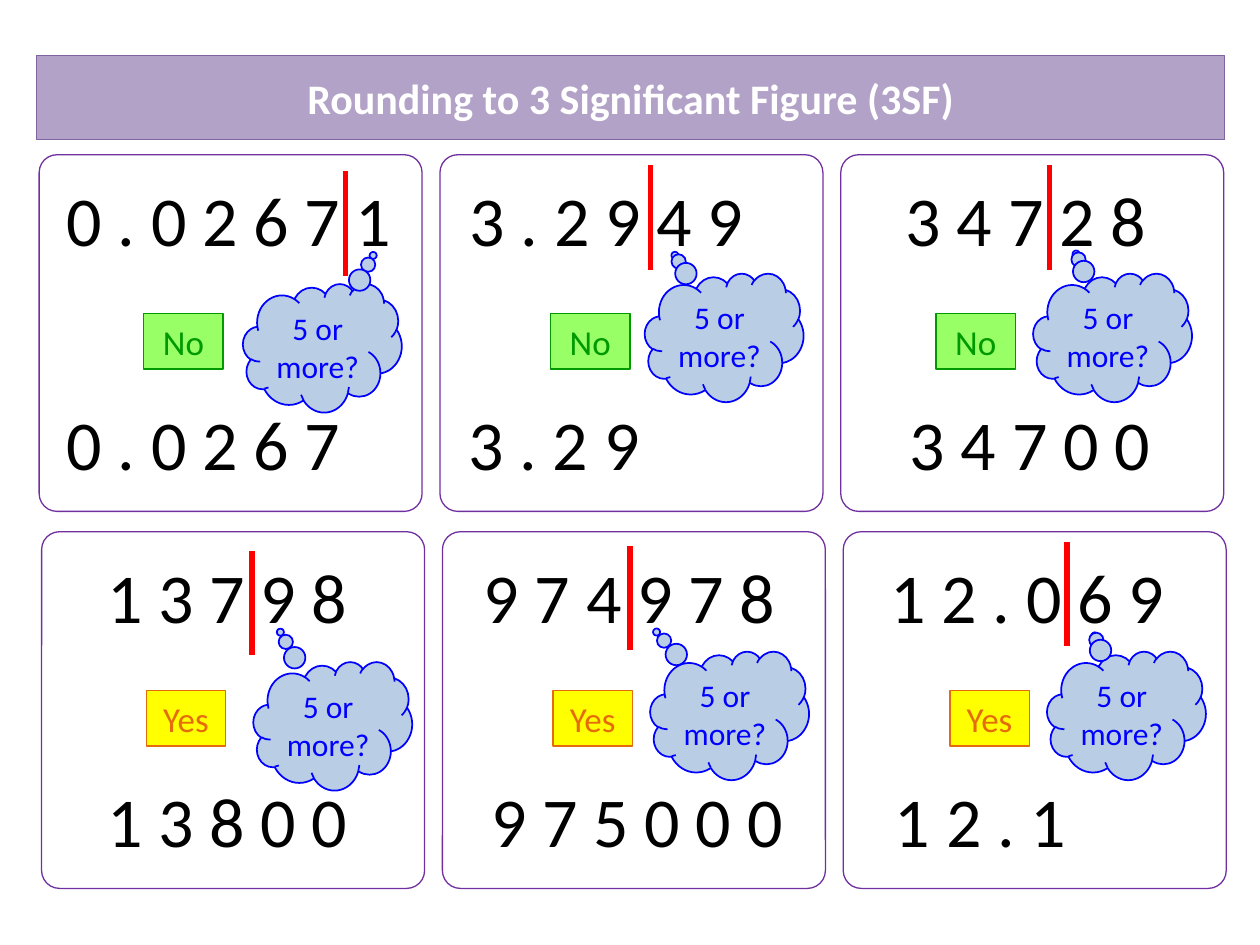
from lxml import etree
from pptx import Presentation
from pptx.dml.color import RGBColor
from pptx.enum.shapes import MSO_CONNECTOR, MSO_SHAPE
from pptx.enum.text import MSO_ANCHOR, PP_ALIGN
from pptx.oxml.ns import qn
from pptx.util import Cm, Pt

ROUNDED = MSO_SHAPE.ROUNDED_RECTANGLE
RECTANGLE = MSO_SHAPE.RECTANGLE
CLOUD = MSO_SHAPE.CLOUD_CALLOUT
STRAIGHT = MSO_CONNECTOR.STRAIGHT
LEFT, CENTER = PP_ALIGN.LEFT, PP_ALIGN.CENTER
MIDDLE = MSO_ANCHOR.MIDDLE

COLORS = {
    "banner": "B3A2C7", "banner_line": "8064A2", "white": "FFFFFF",
    "panel_line": "7030A0", "cut": "FF0000", "digits": "000000",
    "cloud": "B9CDE5", "cloud_line": "0000FF",
    "No": "99FF66", "No_line": "009900",
    "Yes": "FFFF00", "Yes_line": "E46C0A",
}


def color(name):
    return RGBColor.from_string(COLORS[name])


def write(shape, text, size, color_name, alignment=CENTER):
    frame = shape.text_frame
    frame.word_wrap = True
    frame.vertical_anchor = MIDDLE
    frame.text = text
    paragraph = frame.paragraphs[0]
    paragraph.alignment = alignment
    paragraph.font.name = "Calibri"
    paragraph.font.size = Pt(size)
    paragraph.font.color.rgb = color(color_name)


presentation = Presentation()
presentation.slide_width, presentation.slide_height = Cm(25.4), Cm(19.05)
slide = presentation.slides.add_slide(presentation.slide_layouts[5])

# Title banner
title = slide.shapes.title
title.left, title.top, title.width, title.height = Cm(0.74), Cm(1.12), Cm(23.95), Cm(1.7)
geometry = etree.SubElement(title.element.spPr, qn("a:prstGeom"), prst="roundRect")
adjustments = etree.SubElement(geometry, qn("a:avLst"))
etree.SubElement(adjustments, qn("a:gd"), name="adj", fmla="val 21100")
title.fill.solid()
title.fill.fore_color.rgb = color("banner")
title.line.color.rgb = color("banner_line")
title.line.width = Pt(0.75)
write(title, "Rounding to 3 Significant Figure (3SF)", 24, "white")
title.text_frame.paragraphs[0].font.bold = True

# Per panel: (question, left), (answer, left), (cut x, top), badge left,
# (cloud left, top), cloud tail; lengths in cm
ROWS = [
    ("No", 3.12, [
        (("0 . 0 2 6 7 1", 1.09), ("0 . 0 2 6 7", 1.09), (6.96, 3.45), 2.9,
         (4.9, 5.72), (0.32, -0.72)),
        (("3 . 2 9 4 9", 9.22), ("3 . 2 9", 9.19), (13.11, 3.33), 11.1,
         (13, 5.51), (-0.31, -0.64)),
        (("3 4 7 2 8", 18.01), ("3 4 7 0 0", 18.09), (21.16, 3.33), 18.87,
         (20.83, 5.51), (-0.23, -0.65)),
    ]),
    ("Yes", 10.72, [
        (("1 3 7 9 8", 1.91), ("1 3 8 0 0", 1.91), (5.08, 11.1), 2.95,
         (5.11, 13.34), (-0.33, -0.73)),
        (("9 7 4 9 7 8", 9.5), ("9 7 5 0 0 0", 9.65), (12.7, 11), 11.15,
         (13.11, 13.13), (-0.46, -0.65)),
        (("1 2 . 0 6 9", 17.7), ("1 2 . 1", 17.79), (21.51, 10.92), 19.15,
         (21.11, 13.13), (-0.2, -0.62)),
    ]),
]

for row, (verdict, top, panels) in enumerate(ROWS):
    for column, panel_data in enumerate(panels):
        question, answer, (cut_x, cut_top), badge_left, (cloud_left, cloud_top), tail = panel_data

        panel = slide.shapes.add_shape(
            ROUNDED, Cm(0.79 + 8.08 * column + 0.05 * row), Cm(top), Cm(7.72), Cm(7.19))
        panel.shadow.inherit = False
        panel.adjustments[0] = 0.05
        panel.fill.background()
        panel.line.color.rgb = color("panel_line")
        panel.line.width = Pt(0.75)

        cut = slide.shapes.add_connector(
            STRAIGHT, Cm(cut_x), Cm(cut_top), Cm(cut_x), Cm(cut_top + 2.11))
        cut.line.color.rgb = color("cut")
        cut.line.width = Pt(3)
        etree.SubElement(cut.element.spPr, qn("a:effectLst"))

        for (number, left), offset in ((question, 0.31), (answer, 4.83)):
            width = 7.19 if len(number) > 9 else 6.15
            box = slide.shapes.add_textbox(Cm(left), Cm(top + offset), Cm(width), Cm(1.96))
            write(box, number, 40, "digits", LEFT)

        badge = slide.shapes.add_shape(
            RECTANGLE, Cm(badge_left), Cm(top + 3.2), Cm(1.6), Cm(1.12))
        badge.shadow.inherit = False
        badge.fill.solid()
        badge.fill.fore_color.rgb = color(verdict)
        badge.line.color.rgb = color(verdict + "_line")
        badge.line.width = Pt(0.75)
        write(badge, verdict, 20, verdict + "_line")

        thought = slide.shapes.add_group_shape()
        cloud = thought.shapes.add_shape(
            CLOUD, Cm(cloud_left), Cm(cloud_top), Cm(3.2), Cm(2.59))
        cloud.shadow.inherit = False
        cloud.adjustments[0], cloud.adjustments[1] = tail
        cloud.fill.solid()
        cloud.fill.fore_color.rgb = color("cloud")
        cloud.line.color.rgb = color("cloud_line")
        cloud.line.width = Pt(1)
        label = thought.shapes.add_textbox(
            Cm(cloud_left + 0.17), Cm(cloud_top + 0.37), Cm(2.67), Cm(1.8))
        write(label, "5 or more?", 18, "cloud_line")

presentation.save("out.pptx")
